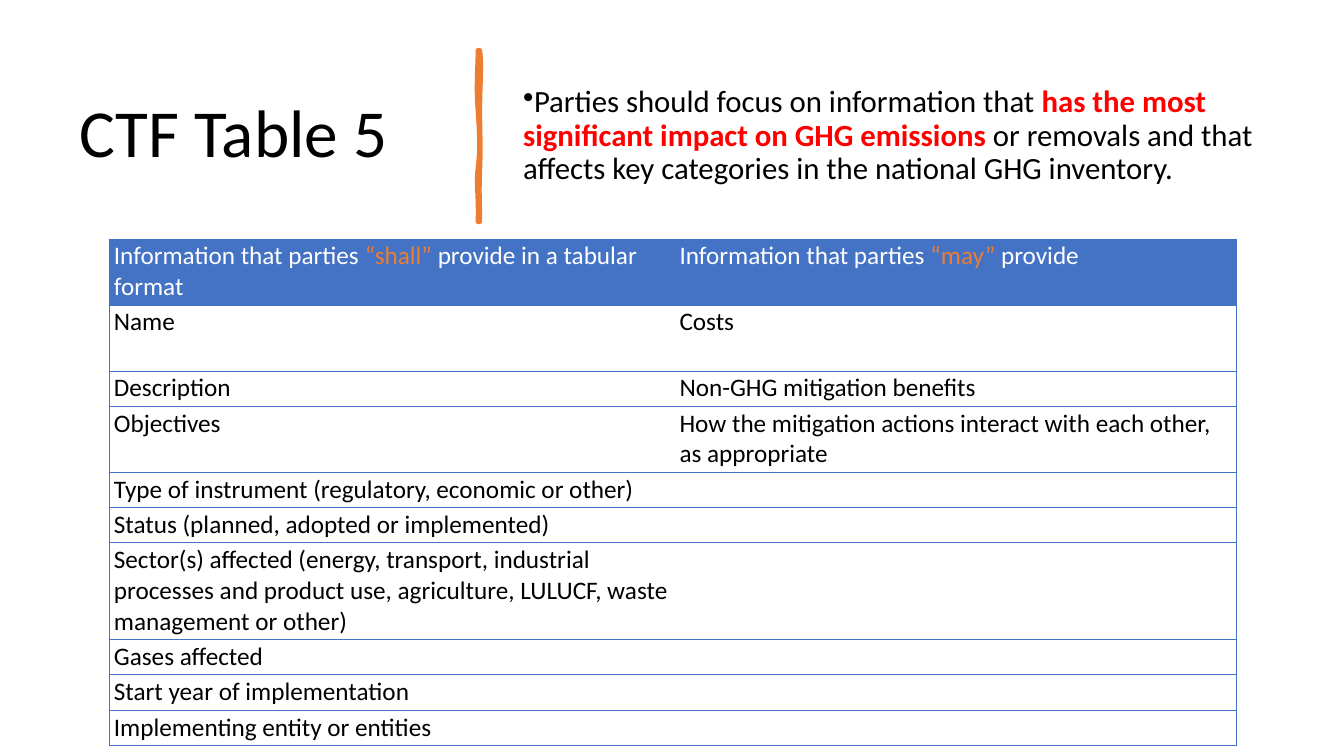
from pptx import Presentation
from pptx import util as u
from pptx.dml.color import RGBColor
from pptx.enum import text
from pptx.oxml import ns
from lxml import etree

FONT = "Calibri"
BLACK, WHITE, RED = "000000", "FFFFFF", "FF0000"
BLUE, ORANGE = "4472C4", "ED7D31"

HEADER = (
    [("Information that parties ", WHITE), ("“shall” ", ORANGE),
     ("provide in a tabular format", WHITE)],
    [("Information that parties ", WHITE), ("“may” ", ORANGE), ("provide", WHITE)],
)
# Left text, right text, number of text lines the row holds
ROWS = [
    ("Name", "Costs", 2),
    ("Description", "Non-GHG mitigation benefits", 1),
    ("Objectives", "How the mitigation actions interact with each other, as appropriate", 2),
    ("Type of instrument (regulatory, economic or other)", "", 1),
    ("Status (planned, adopted or implemented)", "", 1),
    ("Sector(s) affected (energy, transport, industrial processes and product use, "
     "agriculture, LULUCF, waste management or other)", "", 3),
    ("Gases affected", "", 1),
    ("Start year of implementation", "", 1),
    ("Implementing entity or entities", "", 1),
]
LINE_HEIGHT, ROW_PADDING = 0.305, 0.045

# Hand-drawn divider: start point, then cubic curves (two controls, end)
TOP = (4.76, 0.5)
OUTLINE = [
    ((4.78, 0.62), (4.76, 0.88), (4.76, 1.1)),
    ((4.76, 1.32), (4.77, 1.44), (4.76, 1.68)),
    ((4.75, 1.93), (4.76, 1.99), (4.76, 2.2)),
    ((4.75, 2.2), (4.75, 2.2), (4.74, 2.2)),
    ((4.75, 1.96), (4.72, 1.83), (4.74, 1.67)),
    ((4.76, 1.51), (4.76, 1.38), (4.74, 1.1)),
    ((4.72, 0.83), (4.74, 0.67), (4.74, 0.5)),
]
BODY = [
    ((4.76, 0.77), (4.73, 0.9), (4.76, 1.05)),
    ((4.79, 1.2), (4.78, 1.39), (4.76, 1.57)),
    ((4.74, 1.74), (4.75, 1.89), (4.76, 2.2)),
    ((4.75, 2.2), (4.75, 2.2), (4.74, 2.2)),
    ((4.75, 1.96), (4.74, 1.93), (4.74, 1.67)),
    ((4.74, 1.4), (4.72, 1.36), (4.74, 1.07)),
    ((4.76, 0.77), (4.75, 0.65), (4.74, 0.5)),
]


def color(value):
    return RGBColor.from_string(value)


def write(para, spans, size):
    para.font.size = u.Pt(size)
    para.font.name = FONT
    for words, ink, bold in spans:
        span = para.add_run()
        span.text = words
        span.font.color.rgb = color(ink)
        span.font.bold = bold


def add_text(page, left, width, spans, size):
    box = page.shapes.add_textbox(u.Inches(left), u.Inches(0.55),
                                  u.Inches(width), u.Inches(1.6))
    box.text_frame.word_wrap = True
    box.text_frame.vertical_anchor = text.MSO_ANCHOR.MIDDLE
    para = box.text_frame.paragraphs[0]
    para.line_spacing = 0.9
    write(para, spans, size)
    return para


def add_bullet(para):
    props = para._p.get_or_add_pPr()
    props.set("marL", "0")
    props.set("indent", str(-u.Inches(0.25)))
    etree.SubElement(props, ns.qn("a:buChar")).set("char", "•")


def curve_points(start, curves, steps=8):
    points = []
    for first, second, end in curves:
        for step in range(1, steps + 1):
            t = step / steps
            weights = ((1 - t) ** 3, 3 * t * (1 - t) ** 2, 3 * t * t * (1 - t), t ** 3)
            corners = (start, first, second, end)
            points.append(tuple(
                u.Inches(sum(w * corner[axis] for w, corner in zip(weights, corners)))
                for axis in (0, 1)))
        start = end
    return points


def add_brush(page, curves, filled):
    builder = page.shapes.build_freeform(u.Inches(TOP[0]), u.Inches(TOP[1]))
    builder.add_line_segments(curve_points(TOP, curves), close=True)
    brush = builder.convert_to_shape()
    brush.shadow.inherit = False
    if filled:
        brush.fill.solid()
        brush.fill.fore_color.rgb = color(ORANGE)
        brush.line.fill.background()
    else:
        brush.fill.background()
        brush.line.color.rgb = color(ORANGE)
        brush.line.width = u.Pt(3.25)


def set_borders(cell, visible):
    props = cell._tc.get_or_add_tcPr()
    for side in "LRTB":
        line = etree.SubElement(props, ns.qn("a:ln" + side), w=str(u.Pt(0.5)))
        if side in visible:
            fill = etree.SubElement(line, ns.qn("a:solidFill"))
            etree.SubElement(fill, ns.qn("a:srgbClr"), val=BLUE)
        else:
            etree.SubElement(line, ns.qn("a:noFill"))


def fill_cell(cell, spans, visible, back):
    cell.margin_left = cell.margin_right = u.Inches(0.05)
    cell.margin_top = cell.margin_bottom = u.Inches(0.02)
    set_borders(cell, visible)
    if back:
        cell.fill.solid()
        cell.fill.fore_color.rgb = color(back)
    else:
        cell.fill.background()
    write(cell.text_frame.paragraphs[0], spans, 18)


def add_information_table(page):
    rows = [(*HEADER, 2)]
    for left, right, lines in ROWS:
        rows.append(([(left, BLACK)], [(right, BLACK)] if right else [], lines))
    heights = [ROW_PADDING + LINE_HEIGHT * row[2] for row in rows]
    table = page.shapes.add_table(
        len(rows), 2, u.Inches(1.08), u.Inches(2.37),
        u.Inches(11.18), u.Inches(sum(heights))).table
    table.first_row = table.horz_banding = False
    for column, width in zip(table.columns, (5.61, 5.57)):
        column.width = u.Inches(width)
    for r, row in enumerate(rows):
        table.rows[r].height = u.Inches(heights[r])
        for c, visible in enumerate(("LTB", "RTB")):
            spans = [(words, ink, False) for words, ink in row[c]]
            fill_cell(table.cell(r, c), spans, visible, None if r else BLUE)


def main():
    deck = Presentation()
    deck.slide_width, deck.slide_height = u.Inches(13.33), u.Inches(7.5)
    page = deck.slides.add_slide(deck.slide_layouts[6])

    # Heading, divider and key message
    add_text(page, 0.69, 3.74, [("CTF Table 5", BLACK, False)], 48)
    add_brush(page, BODY, filled=True)
    add_brush(page, OUTLINE, filled=False)
    message = add_text(page, 5.09, 7.54, [
        ("Parties should focus on information that ", BLACK, False),
        ("has the most significant impact on GHG emissions ", RED, True),
        ("or removals and that affects key categories in the national GHG inventory.",
         BLACK, False),
    ], 22)
    message.space_after = u.Pt(6)
    add_bullet(message)

    # Reporting requirements
    add_information_table(page)
    deck.save("out.pptx")


if __name__ == "__main__":
    main()
